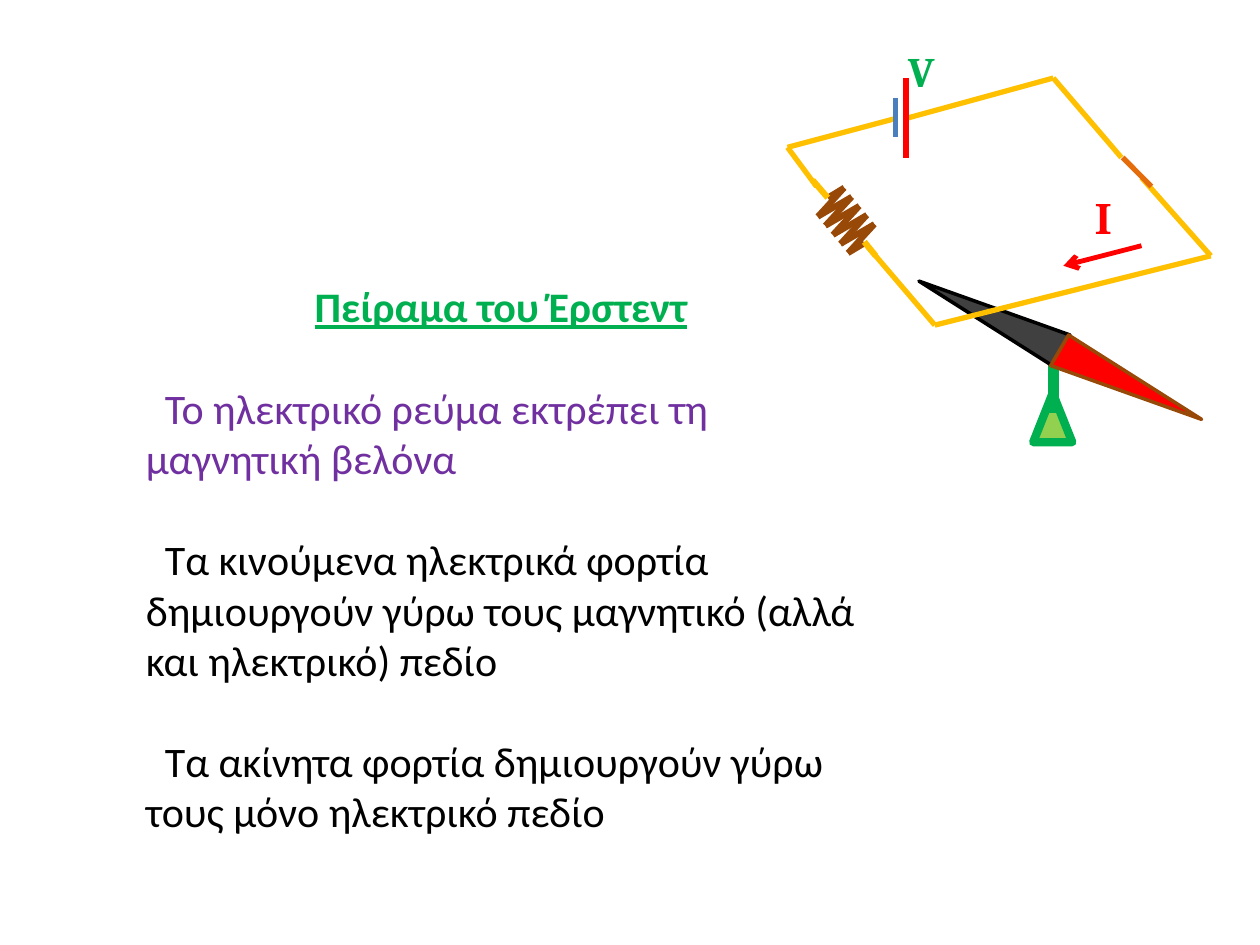
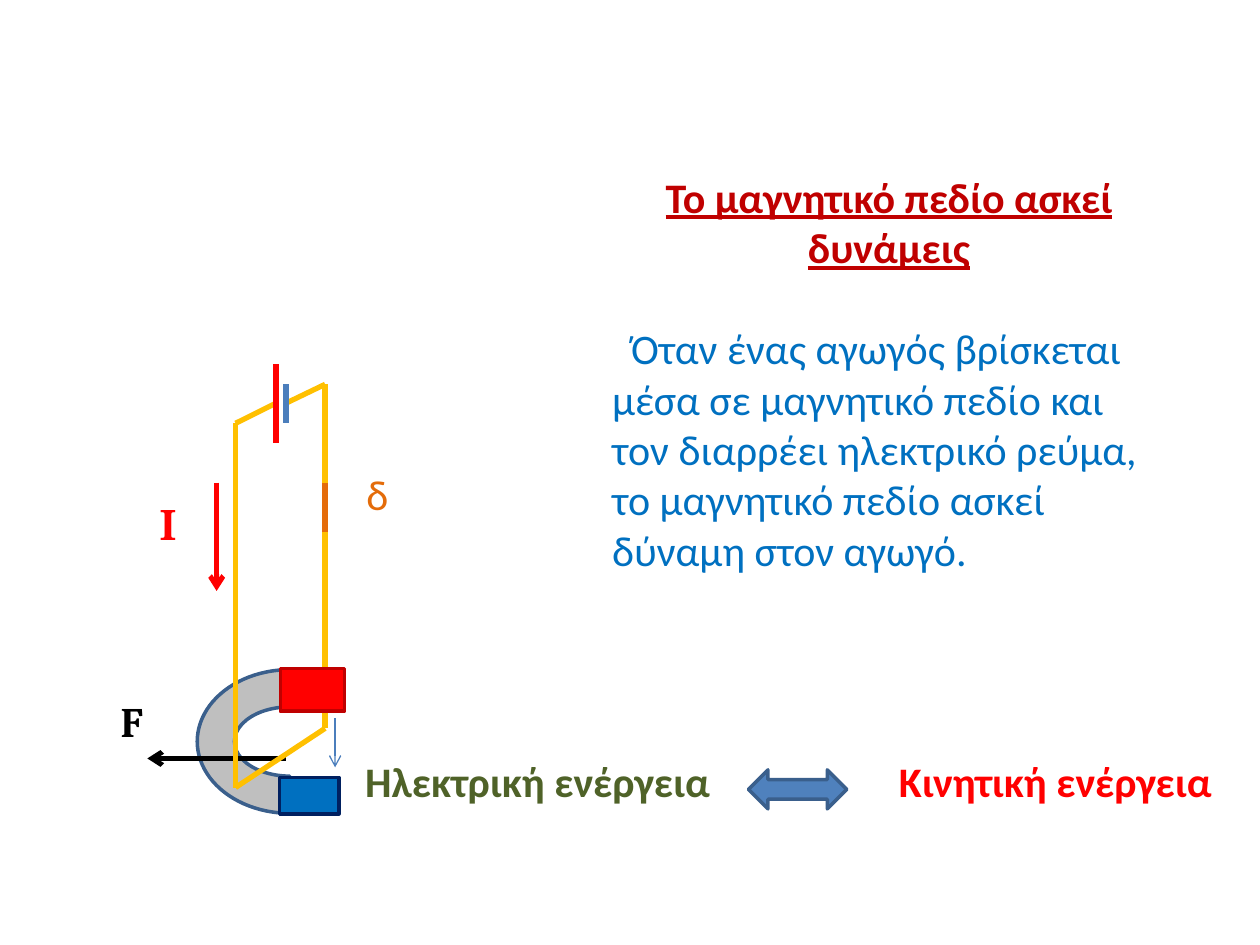
import pptx
import pptx.util
import pptx.dml.color
import pptx.enum.shapes
import pptx.enum.text
import pptx.oxml
import pptx.oxml.ns

Pt = pptx.util.Pt
SHAPE = pptx.enum.shapes.MSO_SHAPE
ALIGN = pptx.enum.text.PP_ALIGN

THEME = {
    "size": 24,
    "gap": 29,
    "indent": 10.8,
    "tag": (78.5, 38.2),
    "green": "00B050", "lime": "92D050", "olive": "4F6228",
    "red": "FF0000", "wine": "C00000", "brown": "984807",
    "gold": "FFC000", "rust": "E46C0A", "purple": "7030A0",
    "blue": "4B7EBC", "steel": "4F81BD", "slate": "3A5F8C",
    "sea": "0070C0", "navy": "002060",
    "black": "000000", "coal": "404040", "grey": "BFBFBF",
}

PENS = {
    "wire": ("gold", 3, False),
    "lead": ("gold", 3.5, False),
    "coil": ("brown", 3.5, False),
    "switch": ("rust", 3, False),
    "plus": ("red", 3, False),
    "minus": ("blue", 3, False),
    "post": ("green", 6.5, False),
    "flow": ("red", 2.75, True),
    "force": ("black", 2.75, True),
    "field": ("blue", 0.75, True),
}

HEAD = {"bold": True, "underline": True}
BOLD = {"bold": True}
MARK = {"bold": True, "name": "Cambria"}


def make_coil(count=5):
    left = [(467.3 + 4.32 * i, 123.8 + 5.2 * i) for i in range(count)]
    right = [(482.4 + 4.32 * i, 107.3 + 5.2 * i) for i in range(count)]
    turns = [(473, 113)]
    for pair in zip(right, left):
        turns += pair
    return turns + [(493.9, 139)]


OERSTED = [
    ("shape", SHAPE.ISOSCELES_TRIANGLE, (590.4, 224.6, 22.3, 28.1), "lime", "green", 4.75, 0, []),
    ("line", "post", [(602, 236), (602, 196.6)]),
    ("shape", SHAPE.ISOSCELES_TRIANGLE, (557.3, 132.5, 20.2, 90), "coal", "black", 2, 300.2, [0.17]),
    ("shape", SHAPE.ISOSCELES_TRIANGLE, (634.3, 177.8, 20.2, 90), "red", "brown", 2, 120.2, [0.17]),
    ("text", (76.3, 157, 419.8, 326.9), [
        ("Πείραμα του Έρστεντ", "green", HEAD),
        ("Το ηλεκτρικό ρεύμα εκτρέπει τη μαγνητική βελόνα", "purple", {}),
        ("Τα κινούμενα ηλεκτρικά φορτία δημιουργούν γύρω τους μαγνητικό (αλλά και ηλεκτρικό) πεδίο", "black", {}),
        ("Τα ακίνητα φορτία δημιουργούν γύρω τους μόνο ηλεκτρικό πεδίο", "black", {}),
    ]),
    ("line", "wire", [(534.2, 185.8), (495.4, 140.4)]),
    ("line", "wire", [(466.6, 106.6), (450, 84.2), (511.9, 67.7)]),
    ("line", "wire", [(517.7, 67.7), (601.9, 44.6), (640.8, 90)]),
    ("line", "plus", [(517.7, 44.6), (517.7, 90)]),
    ("line", "minus", [(511.9, 56.2), (511.9, 78.5)]),
    ("line", "wire", [(652.3, 101.5), (691.9, 146.2), (534.2, 185.8)]),
    ("tag", (511.9, 22.3), "V", "green", MARK),
    ("line", "coil", make_coil()),
    ("line", "lead", [(464.4, 103), (473, 113)]),
    ("line", "lead", [(493.9, 138.2), (500.4, 146.2)]),
    ("line", "switch", [(658, 106.6), (641.5, 90)]),
    ("line", "flow", [(652.3, 140.4), (607.7, 151.9)]),
    ("tag", (618.5, 106.6), "Ι", "red", MARK),
]

FORCE = [
    ("line", "wire", [(185.8, 416.2), (185.8, 298.1)]),
    ("text", (342.7, 94.3, 330.5, 269.3), [
        ("Το μαγνητικό πεδίο ασκεί δυνάμεις", "wine", HEAD),
        ("Όταν ένας αγωγός βρίσκεται μέσα σε μαγνητικό πεδίο και τον διαρρέει ηλεκτρικό ρεύμα, "
         "το μαγνητικό πεδίο ασκεί δύναμη στον αγωγό.", "sea", {}),
    ]),
    ("shape", SHAPE.BLOCK_ARC, (124.6, 370.8, 82.1, 105.8), "grey", "slate", 2, 270, [108.035, 1.473, 0.259]),
    ("shape", SHAPE.RECTANGLE, (166.3, 437.8, 20.9, 33.8), "sea", "navy", 2, 270, []),
    ("shape", SHAPE.RECTANGLE, (166.3, 375.8, 24.5, 36.7), "red", "wine", 2, 270, []),
    ("line", "wire", [(157.7, 230.4), (134.6, 241.9)]),
    ("line", "wire", [(163.4, 230.4), (185.8, 219.6), (185.8, 275.8)]),
    ("line", "plus", [(157.7, 208.1), (157.7, 253.4)]),
    ("line", "minus", [(163.4, 219.6), (163.4, 241.9)]),
    ("line", "switch", [(185.8, 303.8), (185.8, 275.8)]),
    ("tag", (202.3, 264.2), "δ", "rust", {}),
    ("line", "flow", [(123.8, 275.8), (123.8, 337.7)]),
    ("tag", (84.2, 281.5), "Ι", "red", MARK),
    ("line", "force", [(163.4, 433.4), (84.2, 433.4)]),
    ("line", "wire", [(185.8, 416.2), (134.6, 450), (134.6, 241.9)]),
    ("tag", (61.9, 393.8), "F", "black", MARK),
    ("line", "field", [(191.5, 410.4), (191.5, 438.5)]),
    ("tabs", (201.6, 428.4, 499, 94.3), 305, [
        ("Ηλεκτρική ενέργεια", "olive", BOLD),
        ("\tΚινητική ενέργεια", "red", BOLD),
    ]),
    ("shape", SHAPE.LEFT_RIGHT_ARROW, (427.7, 439.9, 56.2, 22.3), "steel", "slate", 2, 0, []),
]


def pts(nums):
    return [Pt(n) for n in nums]


def tint(name):
    return pptx.dml.color.RGBColor.from_string(THEME[name])


def add_node(owner, tag, **attrs):
    node = pptx.oxml.parse_xml(f"<a:{tag} {pptx.oxml.ns.nsdecls('a')}/>")
    for key, value in attrs.items():
        node.set(key, str(value))
    owner.append(node)
    return node


def draw_line(slide, pen, spots):
    hue, width, arrow = PENS[pen]
    for start, end in zip(spots, spots[1:]):
        line = slide.shapes.add_connector(
            pptx.enum.shapes.MSO_CONNECTOR.STRAIGHT, *pts(start + end))
        line.line.color.rgb = tint(hue)
        line.line.width = Pt(width)
        if arrow:
            add_node(line.line._get_or_add_ln(), "tailEnd", type="arrow")
        add_node(line._element.spPr, "effectLst")


def draw_shape(slide, kind, box, fill, edge, width, turn, knobs):
    shape = slide.shapes.add_shape(kind, *pts(box))
    shape.shadow.inherit = False
    shape.fill.solid()
    shape.fill.fore_color.rgb = tint(fill)
    shape.line.color.rgb = tint(edge)
    shape.line.width = Pt(width)
    shape.rotation = turn
    for i, knob in enumerate(knobs):
        shape.adjustments[i] = knob


def add_frame(slide, box):
    frame = slide.shapes.add_textbox(*pts(box)).text_frame
    frame.word_wrap = True
    return frame


def add_run(para, text, hue, form):
    run = para.add_run()
    run.text = text
    run.font.color.rgb = tint(hue)
    for key, value in ({"name": "Calibri", "size": Pt(THEME["size"])} | form).items():
        setattr(run.font, key, value)


def draw_text(slide, box, rows):
    frame = add_frame(slide, box)
    for i, row in enumerate(rows):
        para = frame.add_paragraph() if i else frame.paragraphs[0]
        add_run(para, *row)
        if i:
            para.space_before = Pt(THEME["gap"])
            para._p.get_or_add_pPr().set("indent", str(Pt(THEME["indent"])))
        else:
            para.alignment = ALIGN.CENTER


def draw_tag(slide, spot, text, hue, form):
    frame = add_frame(slide, spot + THEME["tag"])
    add_run(frame.paragraphs[0], text, hue, form)


def draw_tabs(slide, box, stop, runs):
    para = add_frame(slide, box).paragraphs[0]
    stops = add_node(para._p.get_or_add_pPr(), "tabLst")
    add_node(stops, "tab", pos=Pt(stop), algn="l")
    for run in runs:
        add_run(para, *run)


DRAW = {"line": draw_line, "shape": draw_shape, "text": draw_text,
        "tag": draw_tag, "tabs": draw_tabs}


def main():
    deck = pptx.Presentation()
    deck.slide_width, deck.slide_height = Pt(720), Pt(540)
    for parts in (OERSTED, FORCE):
        slide = deck.slides.add_slide(deck.slide_layouts[6])
        for kind, *args in parts:
            DRAW[kind](slide, *args)
    deck.save("out.pptx")


if __name__ == "__main__":
    main()
